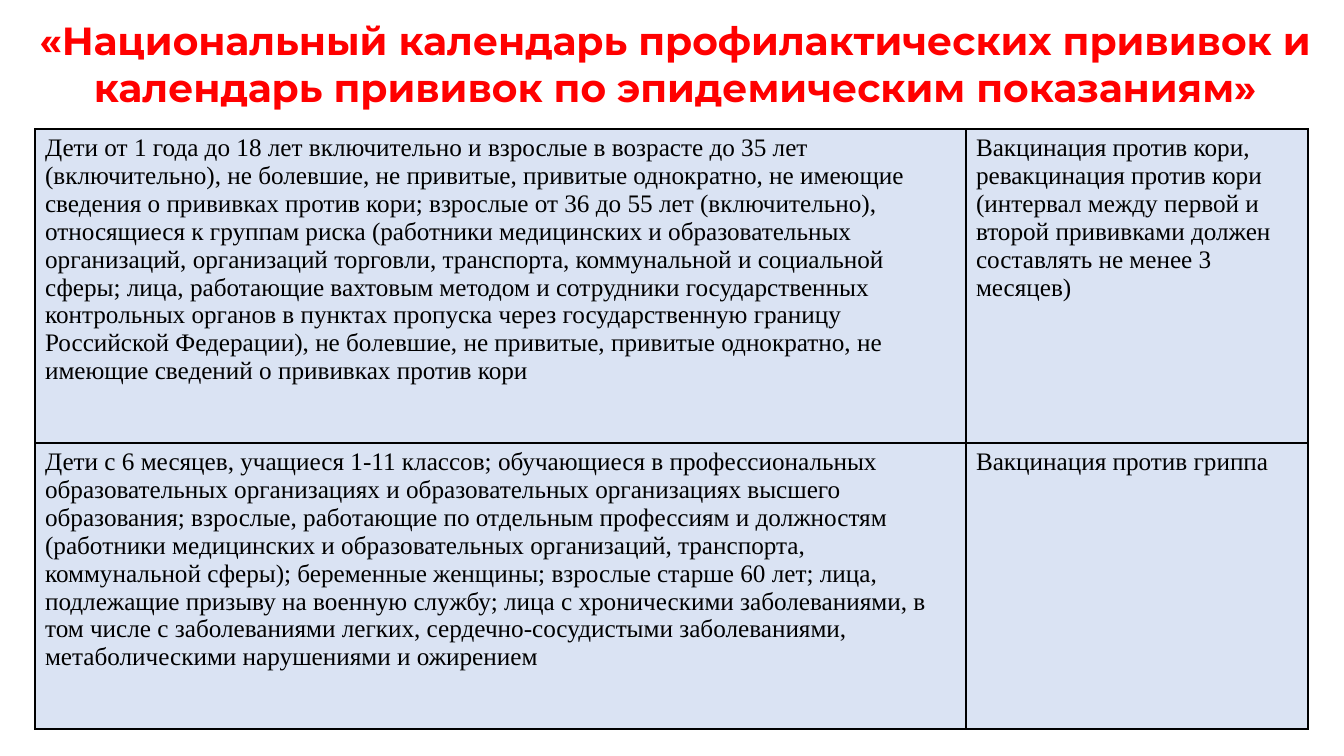
from dataclasses import dataclass

from lxml.etree import SubElement
from pptx import Presentation
from pptx.dml.color import RGBColor as Color
from pptx.enum.text import MSO_AUTO_SIZE as AutoSize, PP_ALIGN as Align
from pptx.oxml.ns import qn
from pptx.util import Emu, Pt

SLIDE_WIDTH, SLIDE_HEIGHT = 1344, 756
EMU_PER_PX = 12192000 / SLIDE_WIDTH


@dataclass(frozen=True)
class Theme:
    title_font: str = "Montserrat"
    title_size: int = 28
    title_color: str = "FF0000"
    body_font: str = "Times New Roman"
    body_size: int = 18
    body_color: str = "000000"
    cell_fill: str = "DAE3F3"
    border_color: str = "000000"
    border_width: int = 1


THEME = Theme()

TITLE = (
    "«Национальный календарь профилактических прививок и "
    "календарь прививок по эпидемическим показаниям»"
)

VACCINATIONS = [
    (
        "Дети от 1 года до 18 лет включительно и взрослые в возрасте до 35 лет "
        "(включительно), не болевшие, не привитые, привитые однократно, не имеющие "
        "сведения о прививках против кори; взрослые от 36 до 55 лет (включительно), "
        "относящиеся к группам риска (работники медицинских и образовательных "
        "организаций, организаций торговли, транспорта, коммунальной и социальной "
        "сферы; лица, работающие вахтовым методом и сотрудники государственных "
        "контрольных органов в пунктах пропуска через государственную границу "
        "Российской Федерации), не болевшие, не привитые, привитые однократно, не "
        "имеющие сведений о прививках против кори",
        "Вакцинация против кори, ревакцинация против кори (интервал между первой и "
        "второй прививками должен составлять не менее 3 месяцев)",
    ),
    (
        "Дети с 6 месяцев, учащиеся 1-11 классов; обучающиеся в профессиональных "
        "образовательных организациях и образовательных организациях высшего "
        "образования; взрослые, работающие по отдельным профессиям и должностям "
        "(работники медицинских и образовательных организаций, транспорта, "
        "коммунальной сферы); беременные женщины; взрослые старше 60 лет; лица, "
        "подлежащие призыву на военную службу; лица с хроническими заболеваниями, в "
        "том числе с заболеваниями легких, сердечно-сосудистыми заболеваниями, "
        "метаболическими нарушениями и ожирением",
        "Вакцинация против гриппа",
    ),
]


def px(length):
    return Emu(round(length * EMU_PER_PX))


def add_run(paragraph, text, font, size, color, bold=False):
    run = paragraph.add_run()
    run.text = text
    run.font.name = font
    run.font.size = Pt(size)
    run.font.bold = bold
    run.font.color.rgb = Color.from_string(color)


def add_title(slide, text, left, top, width, height):
    shape = slide.shapes.add_textbox(px(left), px(top), px(width), px(height))
    frame = shape.text_frame
    frame.word_wrap = True
    frame.auto_size = AutoSize.SHAPE_TO_FIT_TEXT
    paragraph = frame.paragraphs[0]
    paragraph.alignment = Align.CENTER
    add_run(paragraph, text, THEME.title_font, THEME.title_size, THEME.title_color, True)


def set_borders(cell):
    properties = cell._tc.get_or_add_tcPr()
    for index, side in enumerate(("lnL", "lnR", "lnT", "lnB")):
        line = SubElement(properties, qn(f"a:{side}"), w=str(Pt(THEME.border_width)))
        fill = SubElement(line, qn("a:solidFill"))
        SubElement(fill, qn("a:srgbClr"), val=THEME.border_color)
        properties.insert(index, line)


def fill_cell(cell, text):
    cell.fill.solid()
    cell.fill.fore_color.rgb = Color.from_string(THEME.cell_fill)
    set_borders(cell)
    paragraph = cell.text_frame.paragraphs[0]
    add_run(paragraph, text, THEME.body_font, THEME.body_size, THEME.body_color)


def add_text_table(slide, rows, left, top, column_widths, row_heights):
    table = slide.shapes.add_table(
        len(row_heights), len(column_widths),
        px(left), px(top), px(sum(column_widths)), px(sum(row_heights)),
    ).table
    table.first_row = False
    table.horz_banding = False
    for column, width in zip(table.columns, column_widths):
        column.width = px(width)
    for row, height, texts in zip(table.rows, row_heights, rows):
        row.height = px(height)
        for cell, text in zip(row.cells, texts):
            fill_cell(cell, text)


def main():
    presentation = Presentation()
    presentation.slide_width = px(SLIDE_WIDTH)
    presentation.slide_height = px(SLIDE_HEIGHT)
    slide = presentation.slides.add_slide(presentation.slide_layouts[6])
    add_title(slide, TITLE, 18, 11, 1314, 105)
    add_text_table(slide, VACCINATIONS, 35, 129, (931, 342), (314, 286))
    presentation.save("out.pptx")


if __name__ == "__main__":
    main()
